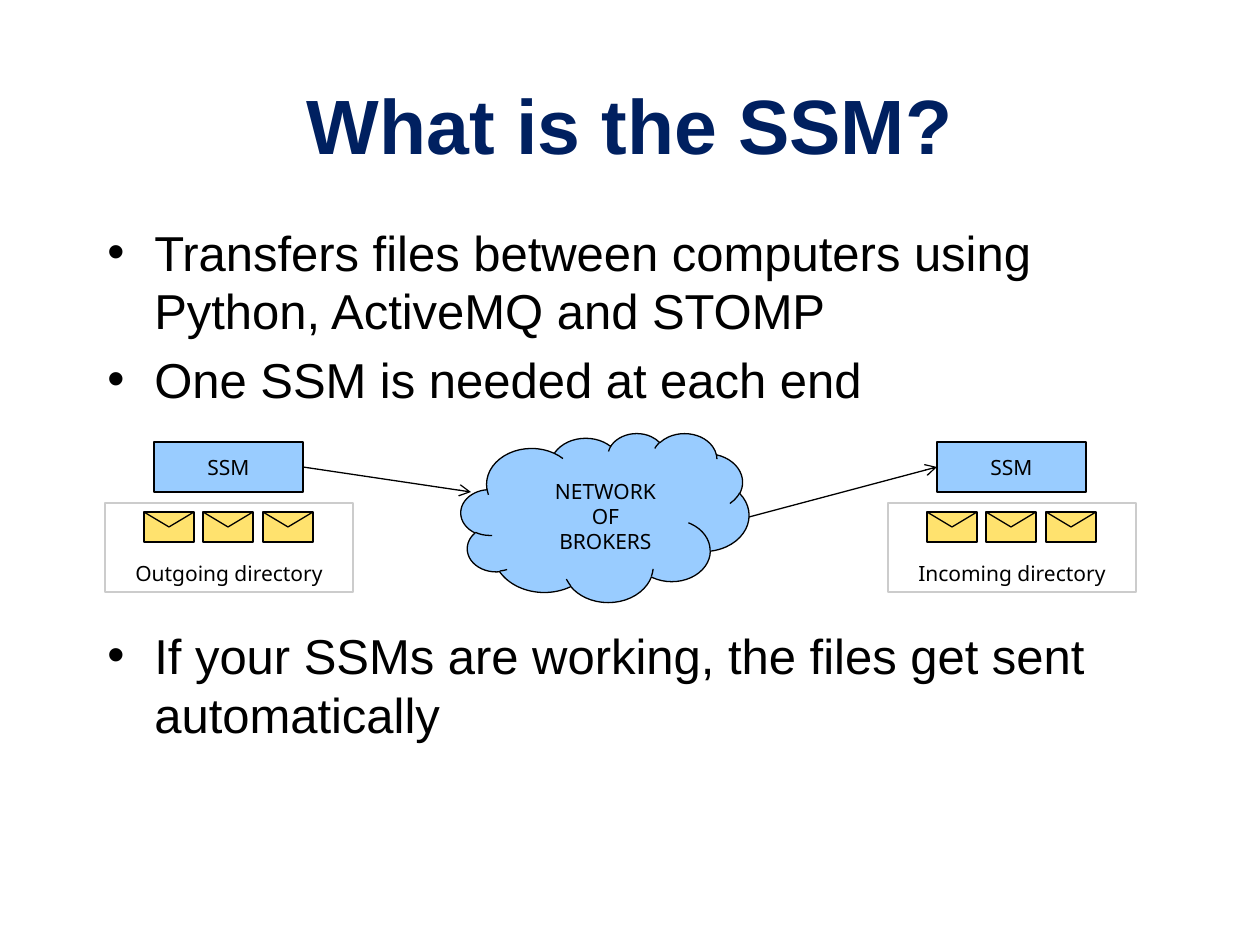
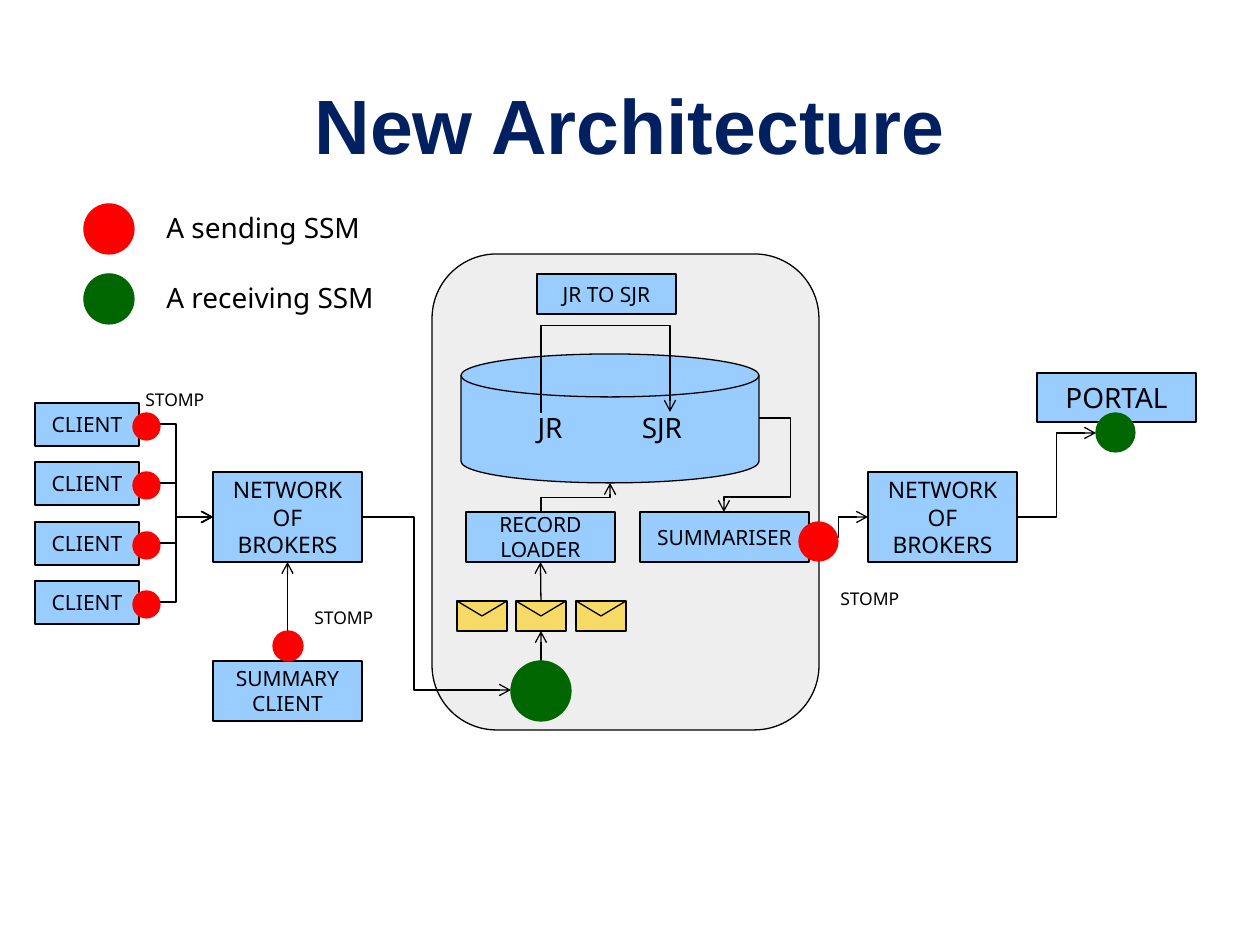
from lxml import etree
from pptx import Presentation
from pptx import util as u
from pptx.dml.color import RGBColor
from pptx.enum import shapes, text
from pptx.oxml.ns import qn

NAVY, BLACK, SKY = "002060", "000000", "99CCFF"
AMBER, SILVER, GREY = "FFCC00", "CCCCCC", "D9D9D9"
SENDER, RECEIVER = "FF0000", "006600"
SHAPE, LINE = shapes.MSO_SHAPE, shapes.MSO_CONNECTOR
ALIGN, ANCHOR = text.PP_ALIGN, text.MSO_ANCHOR
TOP, LEFT, BOTTOM, RIGHT = range(4)
THIN = u.Pt(0.75)
TITLE_FONT = {"name": "Arial", "size": u.Pt(44), "bold": True}
BODY_FONT = {"name": "Arial", "size": u.Pt(28)}


def px(length):
    return u.Emu(round(length * 914400 / 126))


def rgb(hex_colour):
    return RGBColor.from_string(hex_colour)


def apply(target, values):
    for key, value in values.items():
        setattr(target, key, value)


def noto(size):
    return {"name": "Noto Sans", "size": u.Pt(size)}


def write(paragraph, words, font, colour=BLACK, align=ALIGN.CENTER):
    paragraph.text = words
    paragraph.alignment = align
    apply(paragraph.font, font)
    paragraph.font.color.rgb = rgb(colour)


def add_slide(prs, heading):
    slide = prs.slides.add_slide(prs.slide_layouts[5])
    title = slide.shapes.title
    apply(title, {"left": 0, "top": px(45), "width": px(1260), "height": px(158)})
    apply(title.text_frame, {"auto_size": text.MSO_AUTO_SIZE.NONE,
                             "vertical_anchor": ANCHOR.MIDDLE})
    write(title.text_frame.paragraphs[0], heading, TITLE_FONT, NAVY)
    return slide


def block(slide, kind, box, fill=SKY, line=BLACK, alpha=None):
    shape = slide.shapes.add_shape(kind, *map(px, box))
    shape.shadow.inherit = False
    shape.line.width = THIN
    shape.line.color.rgb = rgb(line)
    if fill is None:
        shape.fill.background()
        return shape
    shape.fill.solid()
    shape.fill.fore_color.rgb = rgb(fill)
    if alpha:
        colour = shape.fill._xPr.find(".//" + qn("a:srgbClr"))
        etree.SubElement(colour, qn("a:alpha"), val=str(alpha * 1000))
    return shape


def labelled_box(slide, box, words, size=12, anchor=ANCHOR.MIDDLE, **look):
    shape = block(slide, SHAPE.RECTANGLE, box, **look)
    apply(shape.text_frame, {"word_wrap": True, "vertical_anchor": anchor})
    write(shape.text_frame.paragraphs[0], words, noto(size))
    return shape


def label(slide, box, words, size, align=ALIGN.LEFT):
    frame = slide.shapes.add_textbox(*map(px, box)).text_frame
    frame.word_wrap = True
    write(frame.paragraphs[0], words, noto(size), align=align)


def dot(slide, x, y, diameter, colour):
    block(slide, SHAPE.OVAL, (x, y, diameter, diameter), colour, colour)


def style_line(connector, arrow):
    connector.line.width = THIN
    connector.line.color.rgb = rgb(BLACK)
    if arrow:
        etree.SubElement(connector.line._get_or_add_ln(), qn("a:tailEnd"), type="arrow")
    etree.SubElement(connector._element.spPr, qn("a:effectLst"))


def straight(slide, start, end, arrow=True):
    """Each end is a point or a (shape, side) pair."""
    joined = [not isinstance(stop[0], (int, float)) for stop in (start, end)]
    points = [(0, 0) if join else stop for join, stop in zip(joined, (start, end))]
    connector = slide.shapes.add_connector(
        LINE.STRAIGHT, *(px(value) for point in points for value in point))
    if joined[0]:
        connector.begin_connect(*start)
    if joined[1]:
        connector.end_connect(*end)
    style_line(connector, arrow)


def elbow(slide, start, end, bends=(0.5,), vertical=False):
    """Bent arrow; a vertical one leaves and arrives along the y axis."""
    (x0, y0), (x1, y1) = start, end
    if vertical:
        mid_x, mid_y, dx, dy = (x0 + x1) / 2, (y0 + y1) / 2, x1 - x0, y1 - y0
        x0, y0 = mid_x - dy / 2, mid_y + dx / 2
        x1, y1 = mid_x + dy / 2, mid_y - dx / 2
    connector = slide.shapes.add_connector(LINE.ELBOW, *map(px, (x0, y0, x1, y1)))
    properties = connector._element.spPr
    if vertical:
        properties.find(qn("a:xfrm")).set("rot", "5400000")
    geometry = properties.find(qn("a:prstGeom"))
    geometry.set("prst", f"bentConnector{len(bends) + 2}")
    guides = geometry.find(qn("a:avLst"))
    if guides is None:
        guides = etree.SubElement(geometry, qn("a:avLst"))
    for number, bend in enumerate(bends, 1):
        etree.SubElement(guides, qn("a:gd"), name=f"adj{number}",
                         fmla=f"val {round(bend * 100000)}")
    style_line(connector, arrow=True)


def envelopes(slide, left, top):
    """Row of three messages; returns their rectangles."""
    row = []
    for i in range(3):
        x = left + i * 119 // 2
        row.append(block(slide, SHAPE.RECTANGLE, (x, top, 50, 30), AMBER, alpha=57))
        tip = (x + 25, top + 15)
        straight(slide, (x, top), tip, arrow=False)
        straight(slide, tip, (x + 50, top), arrow=False)
    return row


def bullets(slide, box, items):
    """Items are (words, space before in points)."""
    frame = slide.shapes.add_textbox(*map(px, box)).text_frame
    frame.word_wrap = True
    for i, (words, gap) in enumerate(items):
        paragraph = frame.paragraphs[0] if i == 0 else frame.add_paragraph()
        properties = paragraph._p.get_or_add_pPr()
        apply_indent = {"marL": str(px(47)), "indent": str(-px(47))}
        for key, value in apply_indent.items():
            properties.set(key, value)
        etree.SubElement(properties, qn("a:buFont"), typeface="Arial")
        etree.SubElement(properties, qn("a:buChar"), char="•")
        apply(paragraph, {"space_before": u.Pt(gap), "line_spacing": u.Pt(33.6)})
        write(paragraph, words, BODY_FONT, align=ALIGN.LEFT)


def ssm_end(slide, left, directory):
    """One SSM above its message directory."""
    envelopes(slide, left + 39, 512)
    ssm = labelled_box(slide, (left + 49, 442, 149, 50), "SSM")
    labelled_box(slide, (left, 503, 248, 89), directory,
                 anchor=ANCHOR.BOTTOM, fill=None, line=SILVER)
    return ssm


def what_is_ssm(prs):
    slide = add_slide(prs, "What is the SSM?")
    bullets(slide, (95, 216, 1071, 524), [
        ("Transfers files between computers using Python, ActiveMQ and STOMP", 0),
        ("One SSM is needed at each end", 5.6),
        ("If your SSMs are working, the files get sent automatically", 124)])

    # Sender, broker cloud, receiver
    sender = ssm_end(slide, 105, "Outgoing directory")
    receiver = ssm_end(slide, 888, "Incoming directory")
    block(slide, SHAPE.CLOUD, (461, 433, 288, 169))
    label(slide, (531, 472, 149, 90), "NETWORK OF BROKERS", 12, ALIGN.CENTER)
    straight(slide, (sender, RIGHT), (471, 492))
    straight(slide, (749, 517), (receiver, LEFT))


def new_architecture(prs):
    slide = add_slide(prs, "New Architecture")

    # Central server and its database
    block(slide, SHAPE.ROUNDED_RECTANGLE, (432, 254, 387, 476), GREY, alpha=44)
    block(slide, SHAPE.FLOWCHART_MAGNETIC_DISK, (461, 354, 298, 129))
    label(slide, (510, 404, 80, 50), "JR", 16, ALIGN.CENTER)
    label(slide, (612, 404, 100, 50), "SJR", 16, ALIGN.CENTER)
    labelled_box(slide, (537, 274, 139, 40), "JR TO SJR")
    loader = labelled_box(slide, (466, 512, 149, 50), "RECORD LOADER")
    labelled_box(slide, (640, 512, 169, 50), "SUMMARISER")
    message = envelopes(slide, 457, 601)[1]

    # Brokers, portal and summary client
    brokers, _ = [labelled_box(slide, (x, 472, 149, 90), "NETWORK OF BROKERS", 13)
                  for x in (213, 868)]
    labelled_box(slide, (1037, 373, 159, 49), "PORTAL", 16)
    summary = labelled_box(slide, (213, 661, 149, 60), "SUMMARY CLIENT")

    # Clients, each with a sending SSM
    for i in range(4):
        y = 403 + i * 119 // 2
        labelled_box(slide, (35, y, 104, 43), "CLIENT")
        elbow(slide, (139, y + 21), (213, 517))
        dot(slide, 133, y + 10, 27, SENDER)

    # Message flow
    elbow(slide, (362, 517), (511, 690), (0.35,))
    straight(slide, (541, 661), (message, BOTTOM))
    straight(slide, (message, TOP), (loader, BOTTOM))
    straight(slide, (summary, TOP), (brokers, BOTTOM))
    elbow(slide, (541, 512), (610, 483), vertical=True)
    elbow(slide, (541, 413), (670, 412), (88,), vertical=True)
    elbow(slide, (759, 418), (724, 512), (-0.91, 0.84))
    elbow(slide, (809, 537), (868, 517))
    elbow(slide, (1017, 517), (1096, 433))

    # SSMs on the flow
    dot(slide, 273, 631, 30, SENDER)
    dot(slide, 799, 522, 39, SENDER)
    dot(slide, 511, 661, 60, RECEIVER)
    dot(slide, 1096, 413, 39, RECEIVER)
    for x, y in ((133, 383), (302, 601), (828, 582)):
        label(slide, (x, y, 89, 34), "STOMP", 10)

    # Legend
    for y, colour, words in ((204, SENDER, "A sending SSM"),
                             (274, RECEIVER, "A receiving SSM")):
        dot(slide, 84, y, 50, colour)
        label(slide, (154, y, 248, 47), words, 16)


def main():
    prs = Presentation()
    apply(prs, {"slide_width": px(1260), "slide_height": px(945)})
    what_is_ssm(prs)
    new_architecture(prs)
    prs.save("out.pptx")


if __name__ == "__main__":
    main()
